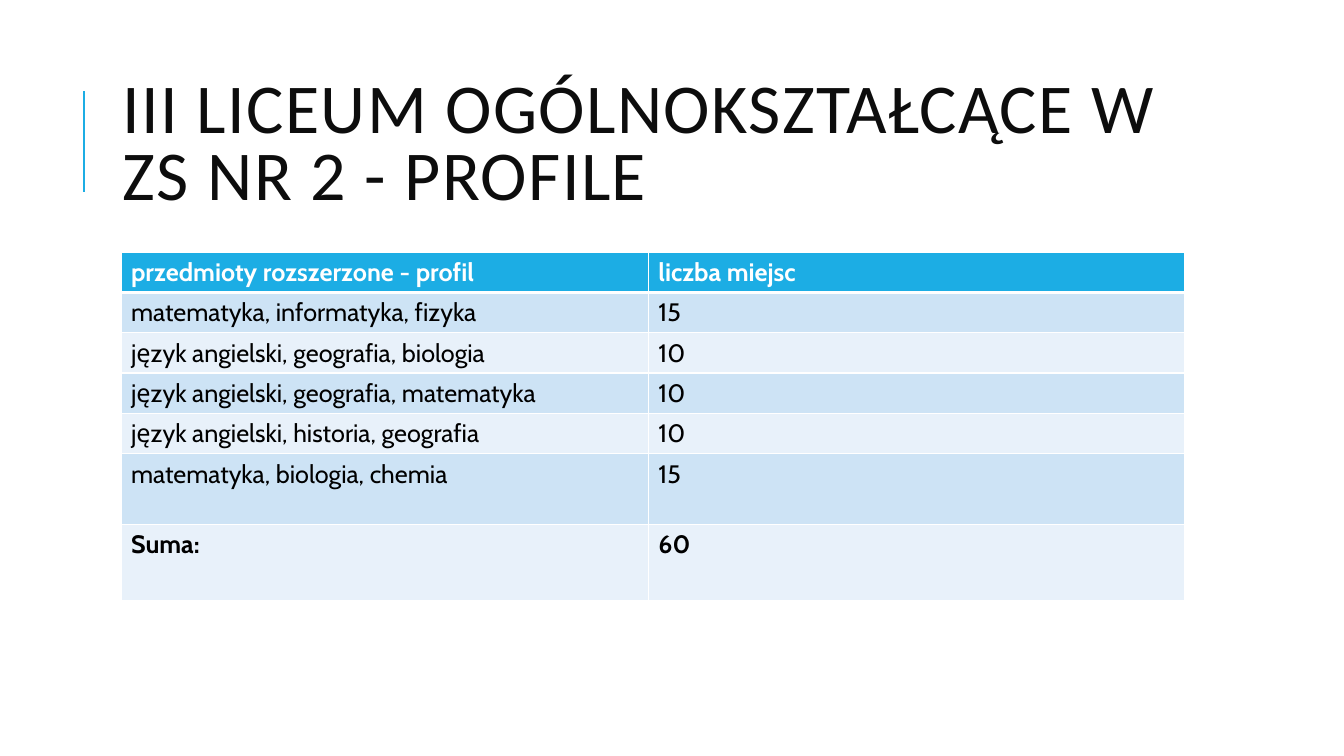
"""Build the slide listing the class profiles of a secondary school."""
from dataclasses import dataclass

from lxml import etree
from pptx import Presentation
from pptx import util as u
from pptx.dml.color import RGBColor
from pptx.enum import shapes, text
from pptx.oxml import ns

COLORS = {
    "accent": "1CADE4",
    "title": "0D0D0D",
    "text": "000000",
    "white": "FFFFFF",
    "band_dark": "CDE3F5",
    "band_light": "E8F1FA",
}
COLUMN_WIDTHS = (5.23, 5.32)


@dataclass
class ProfileRow:
    subjects: str
    places: str
    fill: str
    height: float = 0.4
    color: str = "text"
    bold: bool = False
    bottom_border: float = 1


PROFILE_ROWS = [
    ProfileRow("przedmioty rozszerzone - profil", "liczba miejsc", "accent",
               color="white", bold=True, bottom_border=3),
    ProfileRow("matematyka, informatyka, fizyka", "15", "band_dark"),
    ProfileRow("język angielski, geografia, biologia", "10", "band_light"),
    ProfileRow("język angielski, geografia, matematyka", "10", "band_dark"),
    ProfileRow("język angielski, historia, geografia", "10", "band_light"),
    ProfileRow("matematyka, biologia, chemia", "15", "band_dark", height=0.7),
    ProfileRow("Suma:", "60", "band_light", height=0.76, bold=True),
]


def rgb(name: str) -> RGBColor:
    return RGBColor.from_string(COLORS[name])


def style_font(font, face: str, size: float, color: str, bold: bool = False) -> None:
    font.name = face
    font.size = u.Pt(size)
    font.bold = bold
    font.color.rgb = rgb(color)


def set_borders(cell, widths: dict[str, float]) -> None:
    properties = cell._tc.get_or_add_tcPr()
    for position, (side, width) in enumerate(widths.items()):
        border = etree.Element(ns.qn(f"a:{side}"), w=str(u.Pt(width)))
        fill = etree.SubElement(border, ns.qn("a:solidFill"))
        etree.SubElement(fill, ns.qn("a:srgbClr"), val=COLORS["white"])
        properties.insert(position, border)


def draw_accent(slide) -> None:
    accent = slide.shapes.add_connector(
        shapes.MSO_CONNECTOR.STRAIGHT,
        u.Inches(0.83), u.Inches(1.9), u.Inches(0.83), u.Inches(0.9))
    accent.line.color.rgb = rgb("accent")
    accent.line.width = u.Pt(1.5)
    etree.SubElement(accent._element.spPr, ns.qn("a:effectLst"))


def draw_title(slide) -> None:
    title = slide.shapes.add_textbox(
        u.Inches(1.12), u.Inches(0.64), u.Inches(10.63), u.Inches(1.64))
    frame = title.text_frame
    frame.word_wrap = True
    frame.vertical_anchor = text.MSO_ANCHOR.MIDDLE
    frame.text = "III LICEUM OGÓLNOKSZTAŁCĄCE W ZS NR 2 - PROFILE"
    heading = frame.paragraphs[0]
    heading.line_spacing = 0.8
    font = heading.runs[0].font
    style_font(font, "Calibri", 50, "title")
    font._element.set("spc", "100")


def draw_profiles(slide, rows: list[ProfileRow]) -> None:
    profiles = slide.shapes.add_table(
        len(rows), len(COLUMN_WIDTHS), u.Inches(1.2), u.Inches(2.5),
        u.Inches(sum(COLUMN_WIDTHS)),
        u.Inches(sum(row.height for row in rows))).table
    for column, width in zip(profiles.columns, COLUMN_WIDTHS):
        column.width = u.Inches(width)
    top_border = 1.0
    for index, row in enumerate(rows):
        profiles.rows[index].height = u.Inches(row.height)
        borders = {"lnL": 1, "lnR": 1, "lnT": top_border, "lnB": row.bottom_border}
        for column, words in enumerate((row.subjects, row.places)):
            cell = profiles.cell(index, column)
            cell.fill.solid()
            cell.fill.fore_color.rgb = rgb(row.fill)
            set_borders(cell, borders)
            cell.text_frame.text = words
            style_font(cell.text_frame.paragraphs[0].runs[0].font,
                       "Cabin", 18, row.color, row.bold)
        top_border = row.bottom_border


def main() -> None:
    deck = Presentation()
    deck.slide_width, deck.slide_height = u.Inches(13.33), u.Inches(7.5)
    slide = deck.slides.add_slide(deck.slide_layouts[6])
    draw_accent(slide)
    draw_title(slide)
    draw_profiles(slide, PROFILE_ROWS)
    deck.save("out.pptx")


if __name__ == "__main__":
    main()
